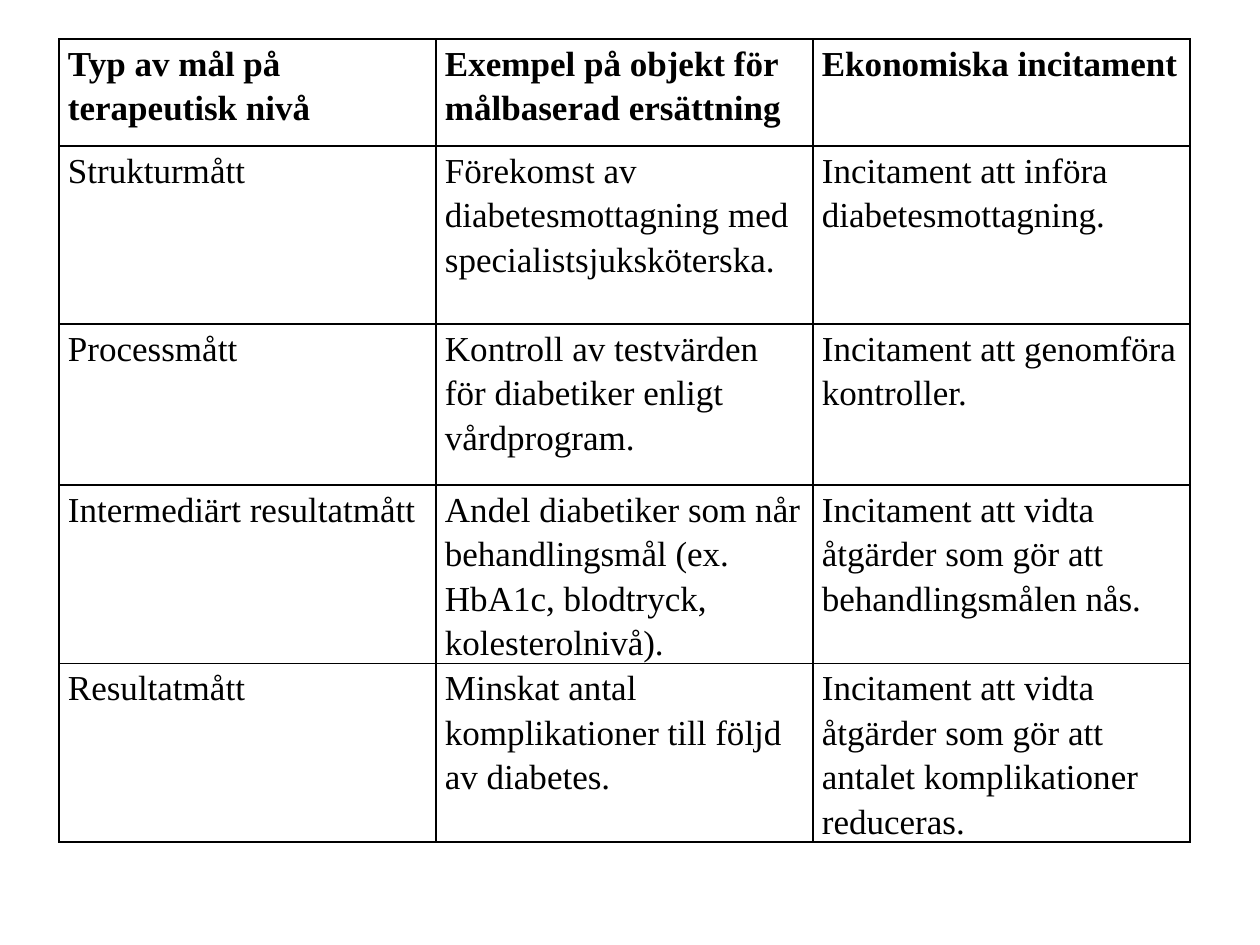
from dataclasses import dataclass

import pptx
import pptx.util
import pptx.dml.color
import pptx.oxml
import pptx.oxml.ns

PX = 914400 / 126
COLORS = {"ink": "000000", "paper": "FFFFFF"}
FONT = "Times New Roman"
SIDES = ("lnL", "lnR", "lnT", "lnB")


@dataclass
class Row:
    height: int
    texts: tuple[str, str, str]
    bold: bool = False


ROWS = [
    Row(107, ("Typ av mål på terapeutisk nivå",
              "Exempel på objekt för målbaserad ersättning",
              "Ekonomiska incitament"), True),
    Row(178, ("Strukturmått",
              "Förekomst av diabetesmottagning med specialistsjuksköterska.",
              "Incitament att införa diabetesmottagning.")),
    Row(161, ("Processmått",
              "Kontroll av testvärden för diabetiker enligt vårdprogram.",
              "Incitament att genomföra kontroller.")),
    Row(161, ("Intermediärt resultatmått",
              "Andel diabetiker som når behandlingsmål (ex. HbA1c, blodtryck, kolesterolnivå).",
              "Incitament att vidta åtgärder som gör att behandlingsmålen nås.")),
    Row(161, ("Resultatmått",
              "Minskat antal komplikationer till följd av diabetes.",
              "Incitament att vidta åtgärder som gör att antalet komplikationer reduceras.")),
]


def emu(px: int) -> int:
    return round(px * PX)


def rgb(name: str) -> pptx.dml.color.RGBColor:
    return pptx.dml.color.RGBColor.from_string(COLORS[name])


def draw_border(cell) -> None:
    props = cell._tc.get_or_add_tcPr()
    space = pptx.oxml.ns.nsdecls("a")
    for side in SIDES:
        props.append(pptx.oxml.parse_xml(
            f'<a:{side} {space} w="{pptx.util.Pt(1)}"><a:solidFill>'
            f'<a:srgbClr val="{COLORS["ink"]}"/></a:solidFill></a:{side}>'))


def draw_cell(cell, text: str, bold: bool) -> None:
    draw_border(cell)
    cell.fill.solid()
    cell.fill.fore_color.rgb = rgb("paper")
    cell.margin_left = cell.margin_right = emu(9)
    cell.margin_top = cell.margin_bottom = 0
    cell.text = text
    para = cell.text_frame.paragraphs[0]
    para.line_spacing = 1.15
    para.font.name = FONT
    para.font.size = pptx.util.Pt(20)
    para.font.bold = bold
    para.font.color.rgb = rgb("ink")


def draw_table(slide, left: int, top: int, width: int, rows: list[Row]) -> None:
    count = len(rows[0].texts)
    height = sum(row.height for row in rows)
    table = slide.shapes.add_table(
        len(rows), count, emu(left), emu(top), emu(width * count), emu(height)).table
    table.first_row = table.horz_banding = False
    for column in table.columns:
        column.width = emu(width)
    for index, row in enumerate(rows):
        table.rows[index].height = emu(row.height)
        for place, text in enumerate(row.texts):
            draw_cell(table.cell(index, place), text, row.bold)


def main() -> None:
    deck = pptx.Presentation()
    deck.slide_width = emu(1260)
    deck.slide_height = emu(945)
    slide = deck.slides.add_slide(deck.slide_layouts[6])
    draw_table(slide, 59, 39, 377, ROWS)
    deck.save("out.pptx")


if __name__ == "__main__":
    main()
